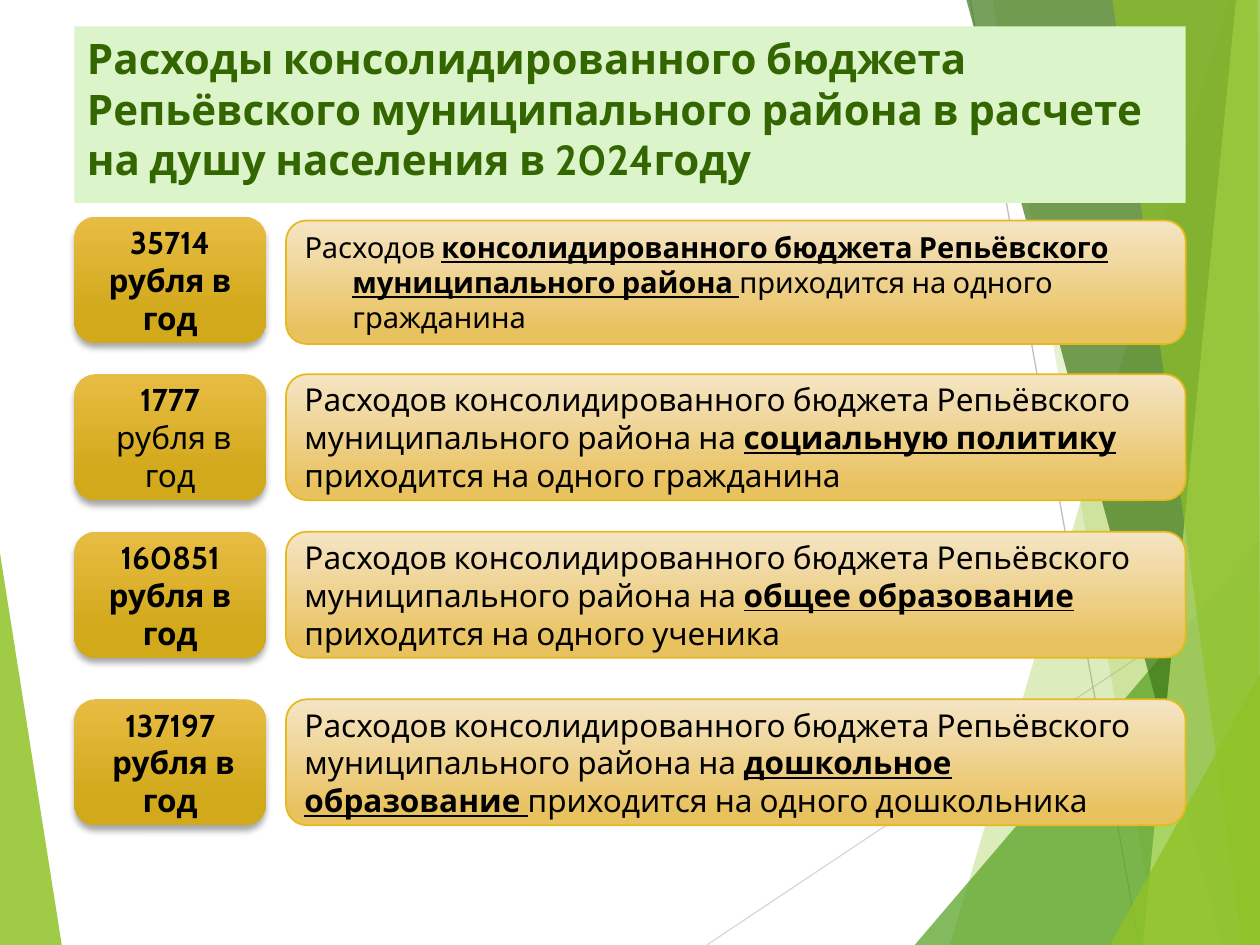
import pptx
import pptx.util
import pptx.dml.color
import pptx.enum.shapes
import pptx.enum.text
import pptx.oxml.ns
import pptx.oxml.xmlchemy
from dataclasses import dataclass
from typing import Any, NamedTuple
from lxml import etree

Kind = pptx.enum.shapes.MSO_SHAPE
Align = pptx.enum.text.PP_ALIGN
Anchor = pptx.enum.text.MSO_ANCHOR
qn = pptx.oxml.ns.qn


@dataclass(frozen=True)
class Theme:
    font: str = "Cabin"
    ink: str = "000000"
    head: str = "336600"
    mint: str = "DBF4CA"
    edge: str = "E6B91E"
    sand: tuple = (("F5E5C5", 0), ("E9C260", 0.88))
    gold: tuple = (("E7BC43", 0), ("D2A91B", 0.78))
    big: float = 24
    mid: float = 18
    small: float = 16.6


class Box(NamedTuple):
    col: float
    row: float
    wide: float
    high: float


class Facet(NamedTuple):
    hue: str
    alpha: int
    points: tuple


class Ray(NamedTuple):
    hue: str
    start: tuple
    end: tuple


class Run(NamedTuple):
    text: str
    bold: bool = False
    under: bool = False


class Item(NamedTuple):
    top: float
    badge: tuple
    panel: tuple


THEME = Theme()
COLS, ROWS = 100, 75
BADGE = (5.9, 15.2)
PANEL = (22.7, 71.4)
HIGH = 10
HEAD = Box(5.9, 2.1, 88.2, 14)
LEAD = Box(22.7, 17.5, 71.4, 9.8)
TITLE = ("Расходы консолидированного бюджета Репьёвского муниципального района "
         "в расчете на душу населения в 2024году")
STEM = "Расходов консолидированного бюджета Репьёвского муниципального района на "
UNIT = "рубля в год"

FACETS = [
    Facet("90C226", 85, ((0, 43.9), (4.9, 75), (0, 75))),
    Facet("90C226", 30, ((97.5, 0), (75.4, 75), (100, 75), (100, 0))),
    Facet("90C226", 20, ((78.8, 0), (91.9, 75), (100, 75), (100, 0))),
    Facet("54A021", 72, ((72.6, 75), (100, 42.9), (100, 75))),
    Facet("3F7819", 70, ((76.7, 0), (97, 75), (100, 75), (100, 0))),
    Facet("C0E474", 70, ((98.1, 0), (90.7, 75), (100, 75), (100, 0))),
    Facet("90C226", 65, ((88.3, 0), (98.6, 75), (100, 75), (99.8, 0))),
    Facet("90C226", 80, ((88.1, 75), (100, 53.5), (100, 75))),
]
RAYS = [Ray("D9D9D9", (56.1, 75), (100, 45.7)),
        Ray("BFBFBF", (77, 0), (90.4, 75))]


def theme_runs(topic: str, who: str) -> tuple:
    return (Run(STEM), Run(topic + " ", True, True),
            Run("приходится на одного " + who))


INTRO = (Run("Расходов "),
         Run("консолидированного бюджета Репьёвского муниципального района ", True, True),
         Run("приходится на одного гражданина"))
ITEMS = [
    Item(17.2, (Run("35714", True), Run(UNIT, True)), ()),
    Item(29.7, (Run("1777", True), Run(" " + UNIT)),
         theme_runs("социальную политику", "гражданина")),
    Item(42.2, (Run("160851 " + UNIT, True),),
         theme_runs("общее образование", "ученика")),
    Item(55.5, (Run("137197", True), Run(" " + UNIT, True)),
         theme_runs("дошкольное образование", "дошкольника")),
]

deck = pptx.Presentation()
deck.slide_width = pptx.util.Inches(10)
deck.slide_height = pptx.util.Inches(7.5)


def across(cols: float) -> int:
    return round(deck.slide_width * cols / COLS)


def down(rows: float) -> int:
    return round(deck.slide_height * rows / ROWS)


def rgb(hue: str) -> pptx.dml.color.RGBColor:
    return pptx.dml.color.RGBColor.from_string(hue)


def apply(thing: Any, form: dict) -> None:
    for name, value in form.items():
        setattr(thing, name, value)


def place(box: Box) -> dict:
    return dict(left=across(box.col), top=down(box.row),
                width=across(box.wide), height=down(box.high))


def blend(shape: Any, stops: tuple) -> None:
    shape.fill.gradient()
    shape.fill.gradient_angle = 270
    for stop, (hue, spot) in zip(shape.fill.gradient_stops, stops):
        stop.color.rgb = rgb(hue)
        stop.position = spot


def outline(shape: Any) -> None:
    shape.line.color.rgb = rgb(THEME.edge)
    shape.line.width = pptx.util.Pt(1)


def write(shape: Any, lines: list, size: float, align: Any,
          anchor: Any = Anchor.MIDDLE, hue: str = THEME.ink) -> None:
    frame = shape.text_frame
    apply(frame, dict(word_wrap=True, vertical_anchor=anchor,
                      auto_size=pptx.enum.text.MSO_AUTO_SIZE.NONE))
    for num, runs in enumerate(lines):
        para = frame.add_paragraph() if num else frame.paragraphs[0]
        para.alignment = align
        for run in runs:
            part = para.add_run()
            part.text = run.text
            apply(part.font, dict(name=THEME.font, size=pptx.util.Pt(size),
                                  bold=run.bold, underline=run.under))
            part.font.color.rgb = rgb(hue)


def draw_facet(shapes: Any, facet: Facet) -> None:
    spots = [(across(x), down(y)) for x, y in facet.points]
    build = shapes.build_freeform(*spots[0])
    build.add_line_segments(spots[1:], close=True)
    shape = build.convert_to_shape()
    shape.shadow.inherit = False
    shape.fill.solid()
    shape.fill.fore_color.rgb = rgb(facet.hue)
    shape.line.fill.background()
    tint = shape.element.spPr.find(".//" + qn("a:srgbClr"))
    etree.SubElement(tint, qn("a:alpha"), val=str(facet.alpha * 1000))


def draw_ray(shapes: Any, ray: Ray) -> None:
    (ax, ay), (bx, by) = ray.start, ray.end
    line = shapes.add_connector(pptx.enum.shapes.MSO_CONNECTOR.STRAIGHT,
                                across(ax), down(ay), across(bx), down(by))
    line.line.color.rgb = rgb(ray.hue)
    line.line.width = pptx.util.Pt(0.75)
    etree.SubElement(line.element.spPr, qn("a:effectLst"))


def draw_card(shapes: Any, box: Box, stops: tuple) -> Any:
    card = shapes.add_shape(Kind.ROUNDED_RECTANGLE, *place(box).values())
    card.shadow.inherit = False
    blend(card, stops)
    return card


def draw_badge(shapes: Any, item: Item) -> None:
    card = draw_card(shapes, Box(BADGE[0], item.top, BADGE[1], HIGH), THEME.gold)
    card.line.fill.background()
    glow = card.element.spPr.find(qn("a:effectLst"))
    cast = etree.SubElement(glow, qn("a:outerShdw"), blurRad=str(pptx.util.Pt(4)),
                            dist=str(pptx.util.Pt(3)), dir="5400000", rotWithShape="0")
    tint = etree.SubElement(cast, qn("a:srgbClr"), val=THEME.ink)
    etree.SubElement(tint, qn("a:alpha"), val="35000")
    write(card, [(run,) for run in item.badge], THEME.mid, Align.CENTER)


def draw_panel(shapes: Any, item: Item) -> None:
    card = draw_card(shapes, Box(PANEL[0], item.top, PANEL[1], HIGH), THEME.sand)
    outline(card)
    write(card, [item.panel], THEME.mid, Align.LEFT)


def draw_head(title: Any) -> None:
    apply(title, place(HEAD))
    title.fill.solid()
    title.fill.fore_color.rgb = rgb(THEME.mint)
    write(title, [(Run(TITLE, True),)], THEME.big, Align.LEFT, Anchor.TOP, THEME.head)


def draw_lead(body: Any) -> None:
    apply(body, place(LEAD))
    geom = etree.Element(qn("a:prstGeom"), prst="roundRect")
    etree.SubElement(geom, qn("a:avLst"))
    body.element.spPr.find(qn("a:xfrm")).addnext(geom)
    blend(body, THEME.sand)
    outline(body)
    write(body, [INTRO], THEME.small, Align.LEFT)
    para = body.text_frame.paragraphs[0]
    para.space_before = pptx.util.Pt(10)
    form = para._p.get_or_add_pPr()
    form.set("marL", str(across(3.8)))
    form.set("indent", str(-across(3.8)))
    etree.SubElement(form, qn("a:buNone"))


def main() -> None:
    slide = deck.slides.add_slide(deck.slide_layouts[1])
    shapes = slide.shapes
    title, body = slide.placeholders
    draw_facet(shapes, FACETS[0])
    for ray in RAYS:
        draw_ray(shapes, ray)
    for facet in FACETS[1:]:
        draw_facet(shapes, facet)
    for holder, draw in ((title, draw_head), (body, draw_lead)):
        shapes.element.append(holder.element)
        draw(holder)
    for item in ITEMS:
        if item.panel:
            draw_panel(shapes, item)
        draw_badge(shapes, item)
    deck.save("out.pptx")


if __name__ == "__main__":
    main()
